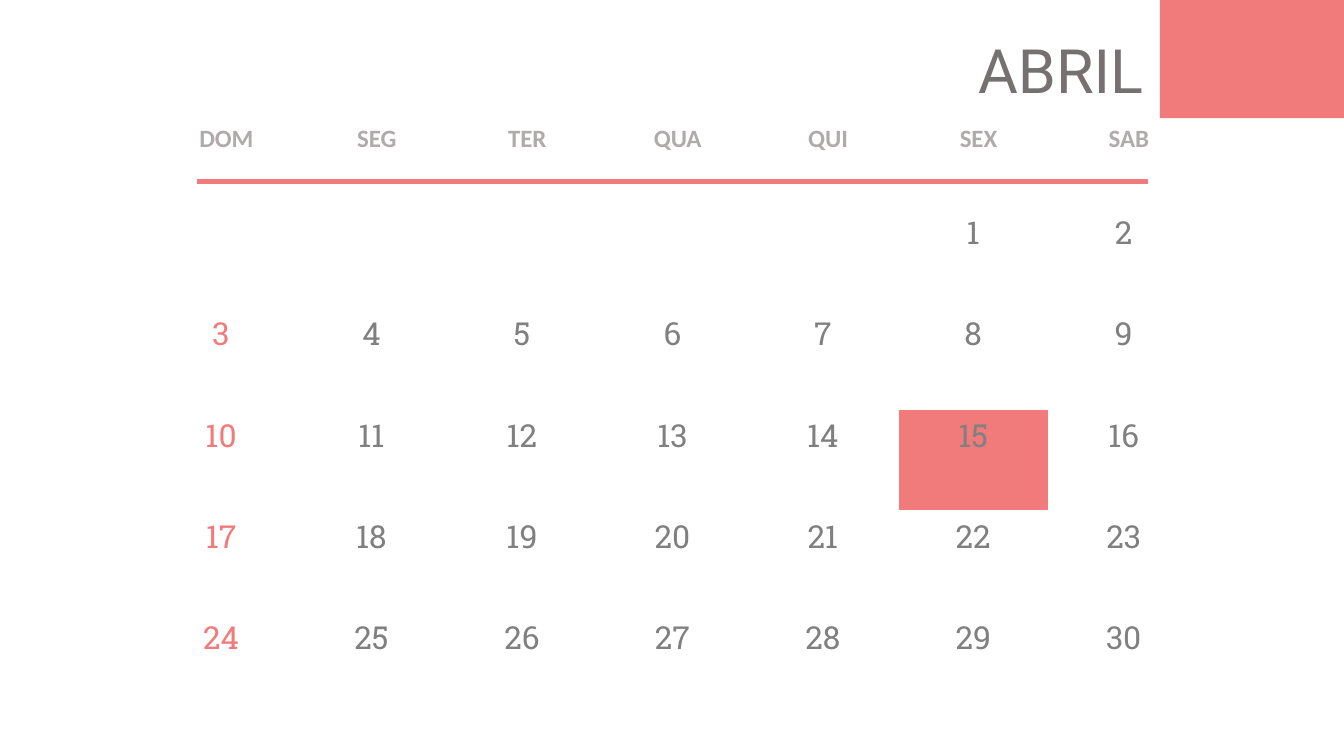
from dataclasses import dataclass

from lxml import etree
from pptx import Presentation
from pptx.dml.color import RGBColor
from pptx.enum import shapes, text
from pptx.oxml import ns
from pptx.util import Pt


@dataclass(frozen=True)
class Theme:
    coral: str = "F17B7B"
    title: str = "767171"
    head: str = "AFABAB"
    day: str = "808080"
    white: str = "FFFFFF"
    title_size: int = 54
    head_size: int = 22
    day_size: int = 28
    title_font: str = "Roboto"
    head_font: str = "Calibri"
    day_font: str = "Roboto Slab"


def rgb(code):
    return RGBColor.from_string(code)


class Page:
    def __init__(self, slide, theme):
        self.items = slide.shapes
        self.theme = theme

    def put(self, frame, words, font, size, color, bold=False, align=None):
        """Set the words and type of a one-paragraph text frame."""
        para = frame.paragraphs[0]
        para.text = words
        para.alignment = align
        para.font.name = font
        para.font.size = Pt(size)
        para.font.color.rgb = rgb(color)
        para.font.bold = bold

    def label(self, words, left, top, width, height):
        frame = self.items.add_textbox(Pt(left), Pt(top), Pt(width), Pt(height)).text_frame
        frame.word_wrap = False
        frame.auto_size = text.MSO_AUTO_SIZE.SHAPE_TO_FIT_TEXT
        t = self.theme
        self.put(frame, words, t.title_font, t.title_size, t.title)

    def block(self, left, top, width, height):
        box = self.items.add_shape(shapes.MSO_SHAPE.RECTANGLE, Pt(left), Pt(top), Pt(width), Pt(height))
        box.shadow.inherit = False
        box.fill.solid()
        box.fill.fore_color.rgb = rgb(self.theme.coral)
        box.line.fill.background()

    def rule(self, left, right, top, weight):
        line = self.items.add_connector(shapes.MSO_CONNECTOR.STRAIGHT, Pt(left), Pt(top), Pt(right), Pt(top))
        line.line.color.rgb = rgb(self.theme.coral)
        line.line.width = Pt(weight)
        etree.SubElement(line._element.spPr, ns.qn("a:effectLst"))

    def edge(self, cell):
        """Give all four sides of the cell a thin white border."""
        props = cell._tc.get_or_add_tcPr()
        for spot, side in enumerate(("lnL", "lnR", "lnT", "lnB")):
            line = etree.Element(ns.qn("a:" + side), w=str(Pt(1)))
            fill = etree.SubElement(line, ns.qn("a:solidFill"))
            etree.SubElement(fill, ns.qn("a:srgbClr"), val=self.theme.white)
            props.insert(spot, line)

    def inset(self, cell, left, right, tall):
        cell.margin_left, cell.margin_right = Pt(left), Pt(right)
        cell.margin_top = cell.margin_bottom = Pt(tall)

    def month(self, names, first, count, mark, left, top, width, head, week):
        """Draw a calendar whose day 1 falls in column `first`."""
        t = self.theme
        cols = len(names)
        weeks = -(-(first + count) // cols)
        grid = self.items.add_table(
            weeks + 1, cols, Pt(left), Pt(top), Pt(width * cols), Pt(head + week * weeks)
        ).table
        grid.first_row = grid.horz_banding = False
        for col in grid.columns:
            col.width = Pt(width)
        for n, row in enumerate(grid.rows):
            row.height = Pt(week if n else head)
        for cell in grid.iter_cells():
            cell.fill.background()
            self.edge(cell)

        mid = text.PP_ALIGN.CENTER
        for col, name in enumerate(names):
            cell = grid.cell(0, col)
            self.inset(cell, 9.4, 0, 5)
            self.put(cell.text_frame, name, t.head_font, t.head_size, t.head, True, mid)
        for day in range(1, count + 1):
            row, col = divmod(first + day - 1, cols)
            cell = grid.cell(row + 1, col)
            self.inset(cell, 10, 10, 4.3)
            color = t.day if col else t.coral
            self.put(cell.text_frame, str(day), t.day_font, t.day_size, color, align=mid)
            if day == mark:
                cell.fill.solid()
                cell.fill.fore_color.rgb = rgb(t.coral)


def main():
    deck = Presentation()
    deck.slide_width, deck.slide_height = Pt(1188), Pt(648)
    page = Page(deck.slides.add_slide(deck.slide_layouts[6]), Theme())
    page.month(
        ["DOM", "SEG", "TER", "QUA", "QUI", "SEX", "SAB"],
        first=5, count=30, mark=15,
        left=128.9, top=104.4, width=133, head=78.5, week=89.4,
    )
    page.label("ABRIL", 857.5, 25.2, 164.2, 72.7)
    page.rule(174.2, 1014.5, 160.6, 4.5)
    page.block(1025.3, 0, 162.7, 104.4)
    deck.save("out.pptx")


if __name__ == "__main__":
    main()
